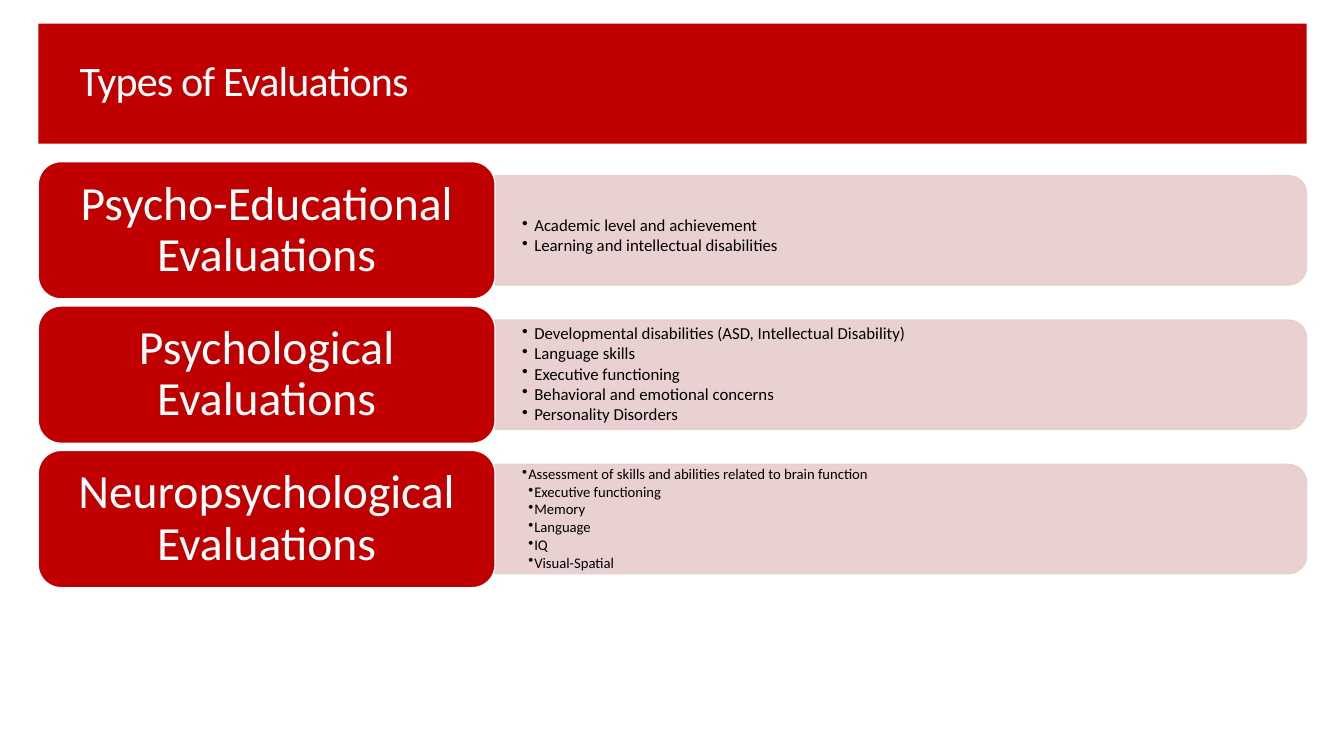
"""Build the slide on types of evaluations."""
from dataclasses import dataclass

from lxml.etree import SubElement
from pptx import Presentation
from pptx.dml.color import RGBColor
from pptx.enum.shapes import MSO_SHAPE as Kind
from pptx.enum.text import MSO_ANCHOR as Anchor, MSO_AUTO_SIZE as Fit, PP_ALIGN as Align
from pptx.oxml.ns import qn
from pptx.util import Inches, Pt

RED, PINK, WHITE, BLACK = "C00000", "E8CCCC", "FFFFFF", "000000"
WIDE, HIGH = Inches(13.33), Inches(7.5)
LEFT, SPLIT, RIGHT = 2.85, 36.83, 97.22
TOP, STEP, CARD, PANEL = 21.4, 19.1, 18.13, 14.5


@dataclass
class Box:
    """Hold a frame in percent of the slide's size."""
    x: float
    y: float
    w: float
    h: float

    def emu(self) -> tuple[int, int, int, int]:
        """Return left, top, width and height as lengths."""
        return (int(WIDE * self.x / 100), int(HIGH * self.y / 100),
                int(WIDE * self.w / 100), int(HIGH * self.h / 100))


@dataclass
class Row:
    """Describe one kind of evaluation and its points."""
    name: str
    points: list[tuple[int, str]]
    size: float = 12
    hang: float = 0.12
    drop: float = 0


ROWS = [
    Row("Psycho-Educational Evaluations", [
        (1, "Academic level and achievement"),
        (1, "Learning and intellectual disabilities")], drop=0.12),
    Row("Psychological Evaluations", [
        (1, "Developmental disabilities (ASD, Intellectual Disability)"),
        (1, "Language skills"),
        (1, "Executive functioning"),
        (1, "Behavioral and emotional concerns"),
        (1, "Personality Disorders")]),
    Row("Neuropsychological Evaluations", [
        (1, "Assessment of skills and abilities related to brain function"),
        (2, "Executive functioning"),
        (2, "Memory"),
        (2, "Language"),
        (2, "IQ"),
        (2, "Visual-Spatial")], size=10.5, hang=0.06),
]


def tint(hue: str) -> RGBColor:
    """Turn a hex string into a colour."""
    return RGBColor.from_string(hue)


def style(para, size: float, hue: str) -> None:
    """Set the font and line spacing of a paragraph."""
    para.line_spacing = 0.9
    para.font.name, para.font.size = "Calibri", Pt(size)
    para.font.color.rgb = tint(hue)


def frame(shape, side: float, top: float = 0):
    """Set up a shape's text frame and return it."""
    text = shape.text_frame
    text.word_wrap, text.auto_size = True, Fit.NONE
    text.vertical_anchor = Anchor.MIDDLE
    text.margin_left = text.margin_right = Inches(side)
    text.margin_top, text.margin_bottom = Inches(top), 0
    return text


def block(slide, kind: Kind, place: tuple, fill: str, edge: str = ""):
    """Draw a flat shape, with an outline if an edge colour is given."""
    shape = slide.shapes.add_shape(kind, *place)
    shape.shadow.inherit = False
    shape.fill.solid()
    shape.fill.fore_color.rgb = tint(fill)
    if edge:
        shape.line.color.rgb = tint(edge)
        shape.line.width = Pt(0.85)
    else:
        shape.line.fill.background()
    return shape


def head(slide, words: str) -> None:
    """Draw the banner and set the title on it."""
    bar = block(slide, Kind.RECTANGLE, Box(LEFT, 3.13, RIGHT - LEFT, 15.87).emu(), RED)
    slide.shapes._spTree.insert(2, bar._element)
    title = slide.shapes.title
    title.left, title.top, title.width, title.height = Box(5.18, 4.4, 86.57, 13.2).emu()
    text = frame(title, 0.1)
    text.text = words
    para = text.paragraphs[0]
    para.alignment = Align.LEFT
    style(para, 30, WHITE)
    para.runs[0]._r.get_or_add_rPr().set("spc", "-60")


def panel(slide, box: Box) -> None:
    """Draw a see-through panel rounded on its right side."""
    x, y, w, h = box.emu()
    turned = (x + (w - h) // 2, y + (h - w) // 2, h, w)
    shape = block(slide, Kind.ROUND_2_SAME_RECTANGLE, turned, PINK, PINK)
    shape.rotation = 90
    for hue in shape._element.spPr.iter(qn("a:srgbClr")):
        SubElement(hue, qn("a:alpha"), val="90000")


def points(slide, box: Box, row: Row) -> None:
    """Write the bulleted points of a row."""
    text = frame(slide.shapes.add_textbox(*box.emu()), 0.27, row.drop)
    for i, (level, words) in enumerate(row.points):
        para = text.add_paragraph() if i else text.paragraphs[0]
        para.text, para.level = words, level
        para.space_after = Pt(row.size / 8)
        prop = para._p.get_or_add_pPr()
        prop.set("marL", str(Inches(row.hang * level)))
        prop.set("indent", str(-Inches(row.hang)))
        SubElement(prop, qn("a:buChar"), char="•")
        style(para, row.size, BLACK)


def card(slide, box: Box, name: str) -> None:
    """Draw the rounded label of a row."""
    text = frame(block(slide, Kind.ROUNDED_RECTANGLE, box.emu(), RED, WHITE), 0.14)
    text.text = name
    para = text.paragraphs[0]
    para.alignment = Align.CENTER
    style(para, 34, WHITE)


def main() -> None:
    """Build and save the deck."""
    deck = Presentation()
    deck.slide_width, deck.slide_height = WIDE, HIGH
    slide = deck.slides.add_slide(deck.slide_layouts[5])
    head(slide, "Types of Evaluations")
    for i, row in enumerate(ROWS):
        y = TOP + i * STEP
        area = Box(SPLIT, y + (CARD - PANEL) / 2, RIGHT - SPLIT, PANEL)
        panel(slide, area)
        points(slide, area, row)
        card(slide, Box(LEFT, y, SPLIT - LEFT, CARD), row.name)
    deck.save("out.pptx")


if __name__ == "__main__":
    main()
